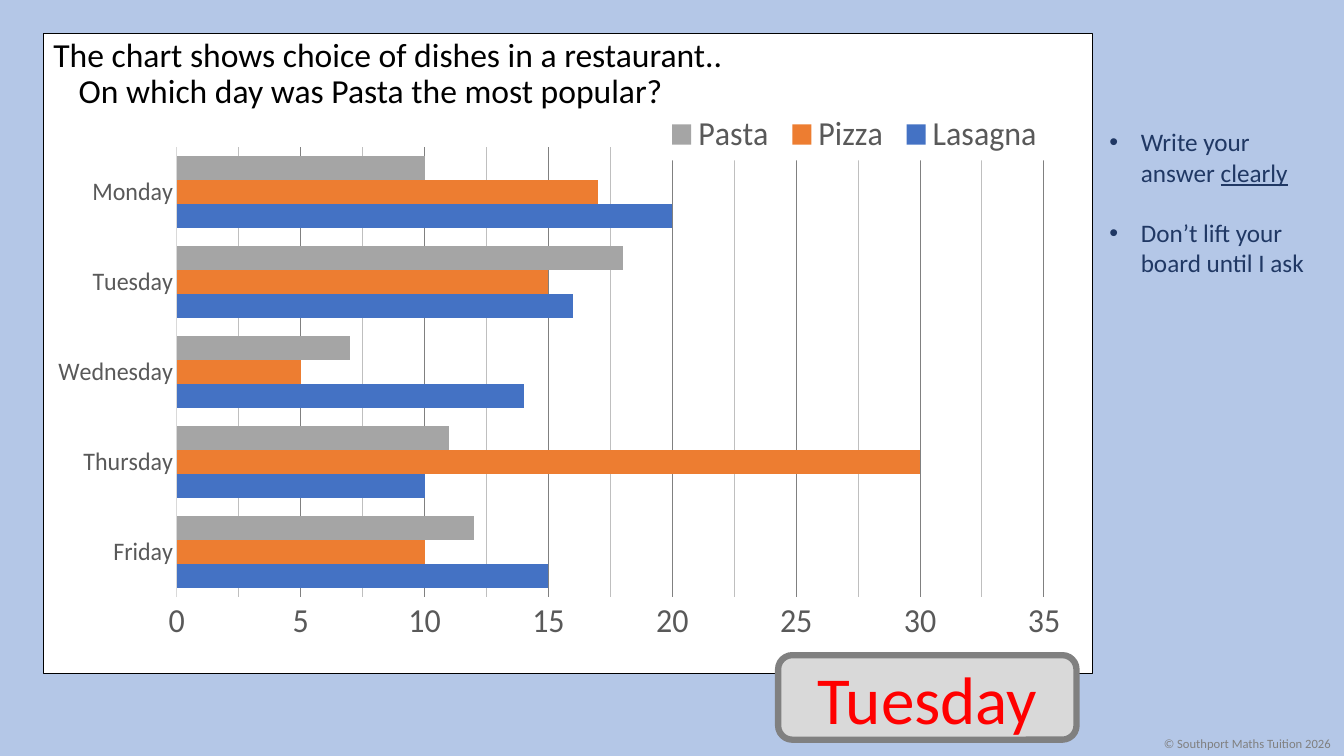
from lxml import etree
from pptx import Presentation
from pptx.chart.data import CategoryChartData
from pptx.dml.color import RGBColor
from pptx.enum.chart import XL_CHART_TYPE, XL_LEGEND_POSITION, XL_TICK_MARK
from pptx.enum.shapes import MSO_SHAPE
from pptx.enum.text import MSO_ANCHOR, MSO_AUTO_SIZE, PP_ALIGN
from pptx.oxml import parse_xml
from pptx.oxml.ns import nsdecls, qn
from pptx.util import Cm, Pt

BACKGROUND = RGBColor(0xB4, 0xC7, 0xE7)
WHITE = RGBColor(0xFF, 0xFF, 0xFF)
BLACK = RGBColor(0, 0, 0)
NAVY = RGBColor(0x20, 0x38, 0x64)
RED = RGBColor(0xFF, 0, 0)
GREY = RGBColor(0x80, 0x80, 0x80)
DARK_GREY = RGBColor(0x59, 0x59, 0x59)
MINOR_GREY = RGBColor(0xBF, 0xBF, 0xBF)
LIGHT_GREY = RGBColor(0xD9, 0xD9, 0xD9)

PANEL = (1.09, 0.84, 26.44, 16.13)
DAYS = ["Friday", "Thursday", "Wednesday", "Tuesday", "Monday"]
DISHES = [
    ("Lasagna", (15, 10, 14, 16, 20), RGBColor(0x44, 0x72, 0xC4)),
    ("Pizza", (10, 30, 5, 15, 17), RGBColor(0xED, 0x7D, 0x31)),
    ("Pasta", (12, 11, 7, 18, 10), RGBColor(0xA5, 0xA5, 0xA5)),
]


class QuizSlide:
    font_name = "Calibri"

    def __init__(self, prs):
        self.s = prs.slides.add_slide(prs.slide_layouts[5])
        fill = self.s.background.fill
        fill.solid()
        fill.fore_color.rgb = BACKGROUND

    def style(self, font, size, color):
        font.name = self.font_name
        font.size = Pt(size)
        font.color.rgb = color

    def run(self, p, text, size, color, underline=None):
        r = p.add_run()
        r.text = text
        self.style(r.font, size, color)
        r.font.underline = underline

    def hang(self, p, indent, bullet=None):
        pPr = p._p.get_or_add_pPr()
        pPr.set("marL", str(Cm(indent)))
        pPr.set("indent", str(-Cm(indent)))
        if bullet:
            etree.SubElement(pPr, qn("a:buFont")).set("typeface", "Arial")
            etree.SubElement(pPr, qn("a:buChar")).set("char", bullet)

    def box(self, shape, at, fill, line, width):
        sp = self.s.shapes.add_shape(shape, *map(Cm, at))
        sp.shadow.inherit = False
        sp.fill.solid()
        sp.fill.fore_color.rgb = fill
        sp.line.color.rgb = line
        sp.line.width = Pt(width)
        return sp

    def title(self, at, lines, size):
        sp = self.s.shapes.title
        sp.left, sp.top, sp.width, sp.height = map(Cm, at)
        tf = sp.text_frame
        tf.auto_size = MSO_AUTO_SIZE.NONE
        tf.vertical_anchor = MSO_ANCHOR.TOP
        p = tf.paragraphs[0]
        p.alignment = PP_ALIGN.LEFT
        p.line_spacing = 0.9
        self.hang(p, 0.64)
        for i, line in enumerate(lines):
            if i:
                p.add_line_break()
            self.run(p, line, size, BLACK)
        return sp

    def text(self, at, paragraphs, size, color, bullet=None, wrap=True, gap=0):
        tf = self.s.shapes.add_textbox(*map(Cm, at)).text_frame
        tf.word_wrap = wrap
        for i, runs in enumerate(paragraphs):
            p = tf.add_paragraph() if i else tf.paragraphs[0]
            if bullet:
                self.hang(p, 0.79, bullet)
            if i:
                p.space_before = Pt(gap)
            for text, underline in runs:
                self.run(p, text, size, color, underline)

    def answer(self, at, text, size):
        sp = self.box(MSO_SHAPE.ROUNDED_RECTANGLE, at, LIGHT_GREY, GREY, 4.5)
        tf = sp.text_frame
        tf.vertical_anchor = MSO_ANCHOR.MIDDLE
        p = tf.paragraphs[0]
        p.alignment = PP_ALIGN.CENTER
        self.run(p, text, size, RED)

    def place(self, element, index, bounds, inner=False):
        for old in element.findall(qn("c:layout")):
            element.remove(old)
        layout = etree.Element(qn("c:layout"))
        manual = etree.SubElement(layout, qn("c:manualLayout"))
        settings = [("layoutTarget", "inner")] if inner else []
        settings += [("xMode", "edge"), ("yMode", "edge"), *zip("xywh", bounds)]
        for tag, value in settings:
            etree.SubElement(manual, qn(f"c:{tag}")).set("val", str(value))
        element.insert(index, layout)

    def bar_chart(self, at, categories, series):
        data = CategoryChartData()
        data.categories = categories
        for name, values, _ in series:
            data.add_series(name, values)
        chart = self.s.shapes.add_chart(
            XL_CHART_TYPE.BAR_CLUSTERED, *map(Cm, at), data).chart
        chart.has_title = False
        self.style(chart.font, 10, BLACK)
        plot = chart.plots[0]
        plot.gap_width = 75
        plot.overlap = 0
        plot.vary_by_categories = False
        for bars, (_, _, color) in zip(plot.series, series):
            bars.format.fill.solid()
            bars.format.fill.fore_color.rgb = color
        self.axes(chart)
        self.legend(chart)
        plot_area = chart._chartSpace.chart.plotArea
        self.place(plot_area, 0, (0.074, 0.067, 0.91, 0.786), inner=True)

    def axes(self, chart):
        for axis, size in ((chart.category_axis, 18), (chart.value_axis, 24)):
            axis.major_tick_mark = axis.minor_tick_mark = XL_TICK_MARK.NONE
            self.style(axis.tick_labels.font, size, DARK_GREY)
        days, counts = chart.category_axis, chart.value_axis
        days.format.line.color.rgb = LIGHT_GREY
        days.format.line.width = Pt(0.75)
        counts.format.line.fill.background()
        counts.minimum_scale, counts.maximum_scale = 0, 35
        counts.major_unit, counts.minor_unit = 5, 2.5
        counts.has_major_gridlines = counts.has_minor_gridlines = True
        major = counts.major_gridlines.format.line
        major.color.rgb = GREY
        major.width = Pt(0.75)
        minor = counts._element.find(qn("c:minorGridlines"))
        minor.append(parse_xml(
            f'<c:spPr {nsdecls("c", "a")}><a:ln w="{Pt(0.75)}"><a:solidFill>'
            f'<a:srgbClr val="{MINOR_GREY}"/></a:solidFill></a:ln></c:spPr>'))

    def legend(self, chart):
        chart.has_legend = True
        legend = chart.legend
        legend.position = XL_LEGEND_POSITION.BOTTOM
        legend.include_in_layout = False
        self.style(legend.font, 24, DARK_GREY)
        element = legend._element
        self.place(element, 1, (0.58, 0, 0.41, 0.09))
        element.find(qn("c:txPr")).addprevious(parse_xml(
            f'<c:spPr {nsdecls("c", "a")}><a:solidFill>'
            f'<a:srgbClr val="{WHITE}"/></a:solidFill></c:spPr>'))


def main():
    prs = Presentation()
    prs.slide_width, prs.slide_height = Cm(33.87), Cm(19.05)
    quiz = QuizSlide(prs)
    panel = quiz.box(MSO_SHAPE.RECTANGLE, PANEL, WHITE, BLACK, 1)
    title = quiz.title(PANEL, [
        "The chart shows choice of dishes in a restaurant..",
        "On which day was Pasta the most popular?"], 24)
    title._element.addprevious(panel._element)
    quiz.text((27.71, 3.07, 5.89, 4.11), [
        [("Write your answer ", None), ("clearly", True)],
        [("Don’t lift your board until I ask", None)],
    ], 18, NAVY, bullet="•", gap=21.6)
    quiz.text((29.08, 18.42, 4.78, 0.64),
              [[("© Southport Maths Tuition 2026", None)]], 9, GREY, wrap=False)
    quiz.bar_chart((1.47, 2.74, 25.25, 14.43), DAYS, DISHES)
    quiz.answer((19.61, 16.51, 7.52, 2.13), "Tuesday", 48)
    prs.save("out.pptx")


if __name__ == "__main__":
    main()
